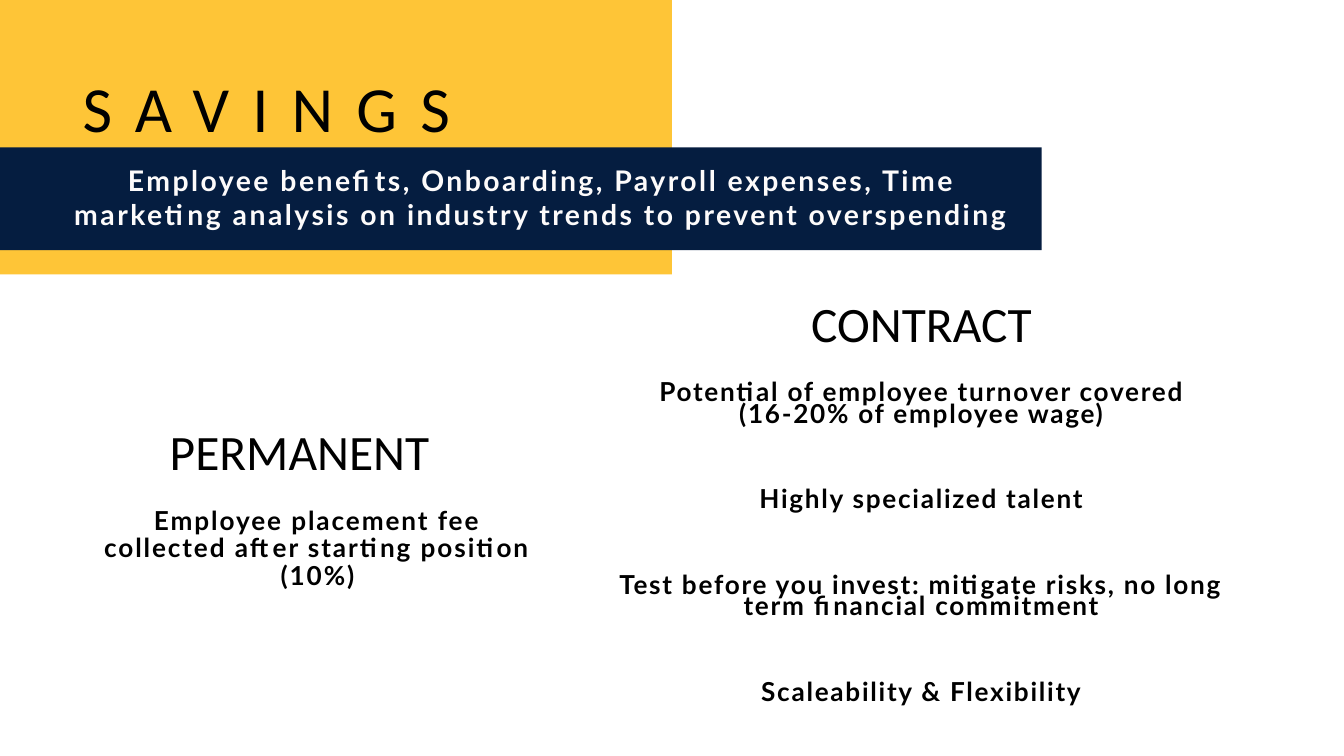
"""Build the savings slide with its permanent and contract offers."""
from pptx import Presentation
from pptx.dml.color import RGBColor as RGB
from pptx.enum.shapes import MSO_SHAPE as Shape
from pptx.enum.text import MSO_ANCHOR as Anchor, MSO_AUTO_SIZE as Fit, PP_ALIGN as Align
from pptx.util import Pt

GOLD = RGB(0xFE, 0xC5, 0x37)
NAVY = RGB(0x05, 0x1D, 0x40)
BLACK = RGB(0, 0, 0)
PALE = RGB(0xFD, 0xFB, 0xFB)


class Deck:
    def __init__(self, slide):
        self.slide = slide
        self.head = "Calibri"
        self.body = "Lato"

    def band(self, box, fill):
        shape = self.slide.shapes.add_shape(Shape.RECTANGLE, *map(Pt, box))
        shape.shadow.inherit = False
        shape.fill.solid()
        shape.fill.fore_color.rgb = fill
        shape.line.fill.background()

    def style(self, shape, lines, face, size, lead, track=0, bold=False, ink=BLACK, gaps=()):
        frame = shape.text_frame
        frame.word_wrap = True
        frame.auto_size = Fit.NONE
        frame.vertical_anchor = Anchor.TOP
        frame.margin_left = frame.margin_right = 0
        frame.margin_top = frame.margin_bottom = 0
        frame.text = "\n".join(lines)
        for num, para in enumerate(frame.paragraphs):
            para.alignment = Align.CENTER
            para.line_spacing = Pt(lead)
            para.space_before = Pt(3 * lead if num in gaps else 0)
            font = para.font
            font.name, font.size, font.bold = face, Pt(size), bold
            font.color.rgb = ink
            props = para._p.get_or_add_pPr().get_or_add_defRPr()
            props.set("spc", str(round(track * 100)))

    def title(self, box, text):
        shape = self.slide.shapes.title
        shape.left, shape.top, shape.width, shape.height = map(Pt, box)
        self.slide.shapes._spTree.append(shape._element)
        self.style(shape, [text], self.head, 69, 69, 24.9)

    def label(self, box, text):
        shape = self.slide.shapes.add_textbox(*map(Pt, box))
        self.style(shape, [text], self.head, 53, 53)

    def prose(self, box, lines, size, lead, track, **more):
        shape = self.slide.shapes.add_textbox(*map(Pt, box))
        self.style(shape, lines, self.body, size, lead, track, True, **more)


def main():
    prs = Presentation()
    prs.slide_width, prs.slide_height = Pt(1440), Pt(810)
    deck = Deck(prs.slides.add_slide(prs.slide_layouts[5]))

    deck.band((-40, -60, 760, 354), GOLD)
    deck.band((0, 158, 1116, 110), NAVY)
    deck.title((-65, 86.4, 701, 71), "SAVINGS")
    deck.prose((-121.7, 175.7, 1402.6, 71), [
        "Employee benefits, Onboarding, Payroll expenses, Time",
        "marketing analysis on industry trends to prevent overspending",
    ], 30.4, 35.8, 2.7, ink=PALE)

    deck.label((51.4, 462.2, 539.3, 57), "PERMANENT")
    deck.prose((105.8, 543.6, 468.7, 117), [
        "Employee placement fee collected after starting position (10%)",
    ], 28, 29.9, 2.1)

    deck.label((717.8, 324.7, 539.3, 57), "CONTRACT")
    deck.prose((637.9, 413.3, 698.4, 340), [
        "Potential of employee turnover covered",
        "(16-20% of employee wage)",
        "Highly specialized talent",
        "Test before you invest: mitigate risks, no long term financial commitment",
        "Scaleability & Flexibility",
    ], 28, 22.9, 1.9, gaps=(2, 3, 4))

    prs.save("out.pptx")


if __name__ == "__main__":
    main()
